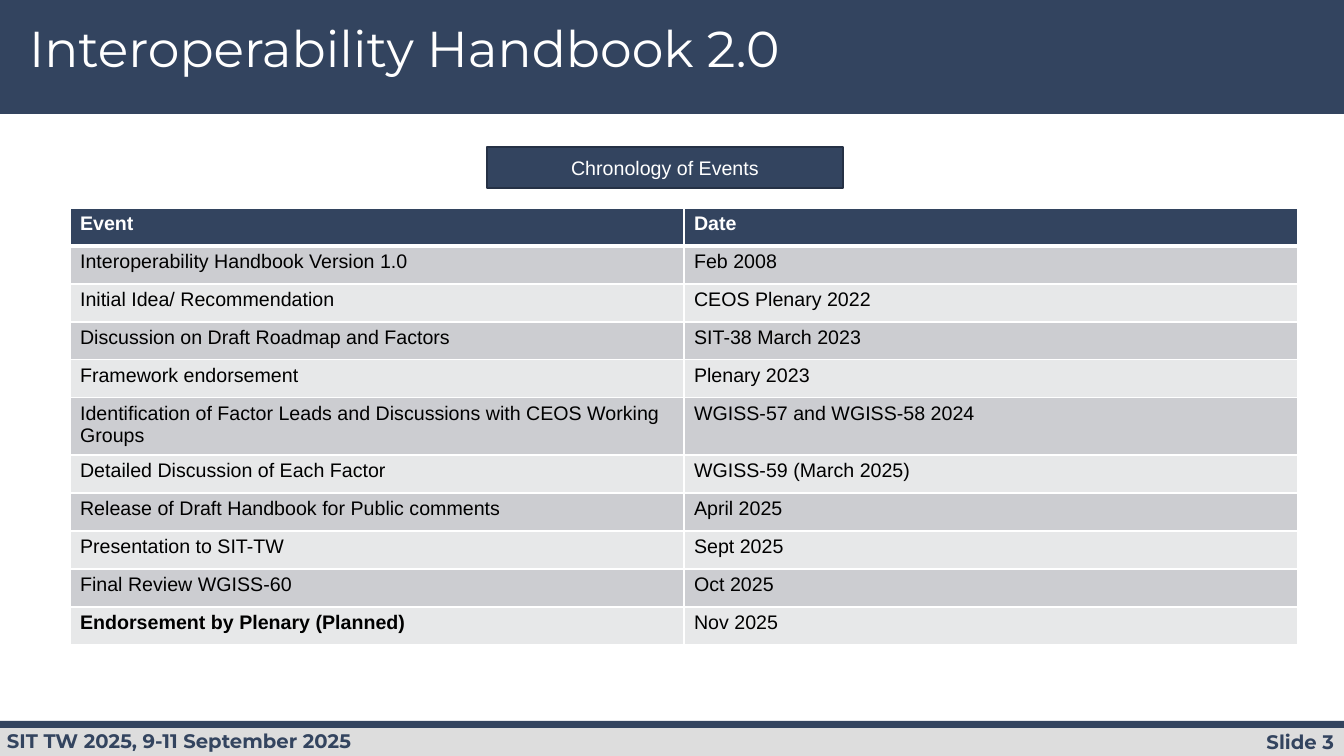
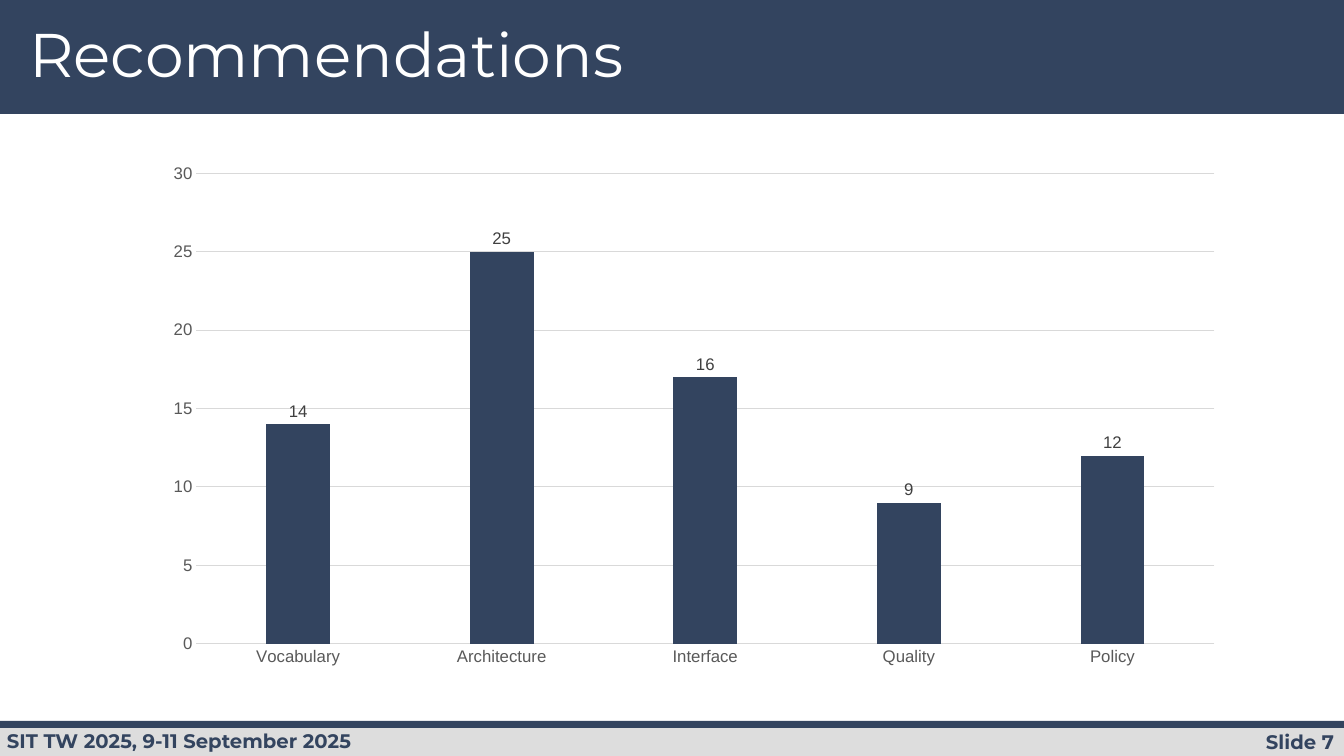
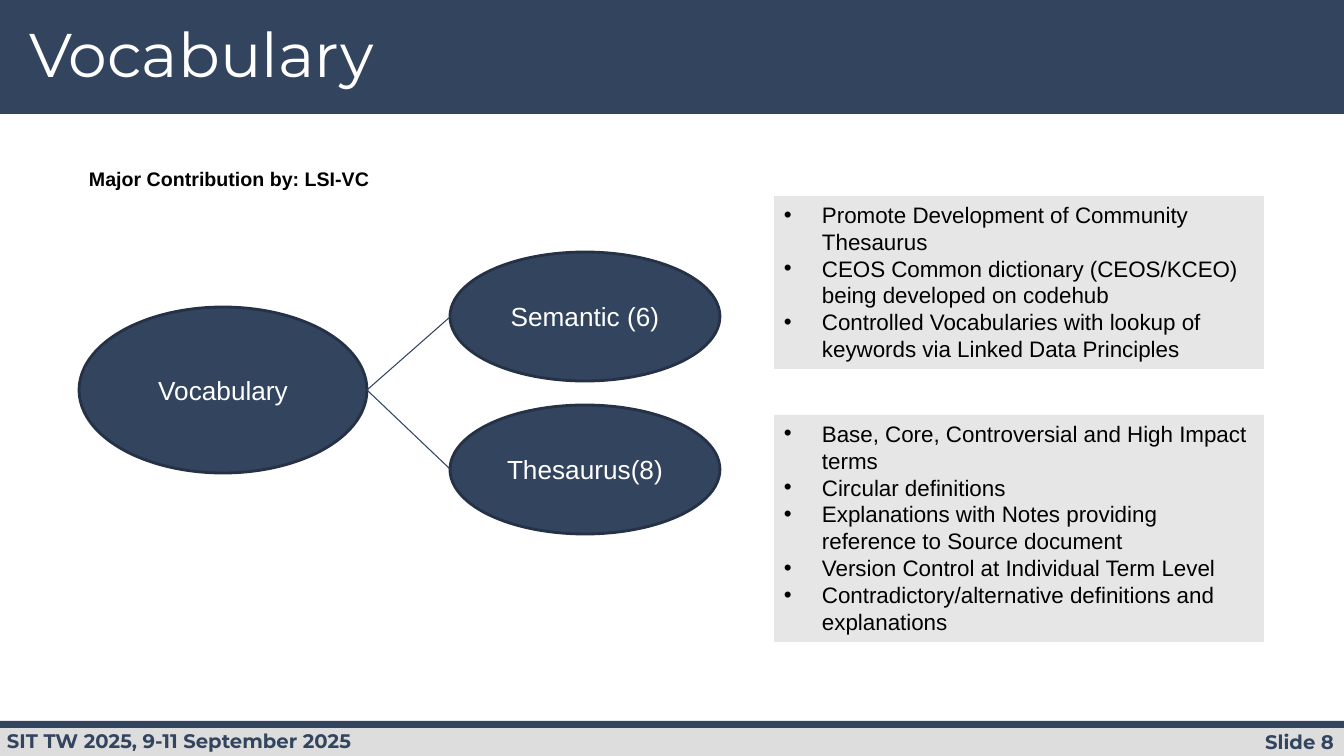
from lxml.etree import SubElement
from pptx import Presentation
from pptx.chart.data import CategoryChartData
from pptx.dml.color import RGBColor
from pptx.enum.chart import XL_CHART_TYPE, XL_LABEL_POSITION, XL_TICK_MARK
from pptx.enum.shapes import MSO_CONNECTOR, MSO_SHAPE
from pptx.enum.text import MSO_ANCHOR as ANCHOR, MSO_AUTO_SIZE, PP_ALIGN as ALIGN
from pptx.oxml.ns import qn
from pptx.util import Emu, Pt

color = RGBColor.from_string
NAVY, EDGE, WHITE, BLACK = "33445F", "253145", "FFFFFF", "000000"
BAND_GRAY, BOX_GRAY, GRID_GRAY, AXIS_GRAY = "DDDDDD", "E7E6E6", "D9D9D9", "595959"
BODY_FONT, BRAND_FONT = "Arial", "Montserrat"
PX_PER_INCH = 100.8


def px(*lengths):
    return [Emu(round(length * 914400 / PX_PER_INCH)) for length in lengths]


def add_box(slide, kind, at, fill=None, edge=None, lines=(), size=14, font=BODY_FONT,
            ink=BLACK, bold=False, align=ALIGN.LEFT, anchor=ANCHOR.TOP, bullets=False):
    """Add a preset shape, or a text box when kind is None."""
    if kind is None:
        shape = slide.shapes.add_textbox(*px(*at))
    else:
        shape = slide.shapes.add_shape(kind, *px(*at))
        shape.shadow.inherit = False
    if fill:
        shape.fill.solid()
        shape.fill.fore_color.rgb = color(fill)
    if edge:
        shape.line.color.rgb = color(edge)
        shape.line.width = Pt(2)
    else:
        shape.line.fill.background()
    text_frame = shape.text_frame
    text_frame.word_wrap = True
    text_frame.vertical_anchor = anchor
    text_frame.text = "\n".join(lines)
    for paragraph in text_frame.paragraphs:
        paragraph.alignment = align
        if bullets:
            properties = paragraph._p.get_or_add_pPr()
            indent = px(38)[0]
            properties.set("marL", str(indent))
            properties.set("indent", str(-indent))
            bullet_color = SubElement(properties, qn("a:buClr"))
            SubElement(bullet_color, qn("a:srgbClr"), val=ink)
            SubElement(properties, qn("a:buFont"), typeface=BODY_FONT)
            SubElement(properties, qn("a:buChar"), char="•")
        for run in paragraph.runs:
            run.font.size = Pt(size)
            run.font.name = font
            run.font.bold = bold
            run.font.color.rgb = color(ink)
    return shape


presentation = Presentation()
presentation.slide_width, presentation.slide_height = px(1344, 756)
layout = presentation.slide_layouts[5]

# Shared layout: only the title placeholder stays
for placeholder in list(layout.placeholders):
    if placeholder.placeholder_format.idx != 0:
        placeholder._element.getparent().remove(placeholder._element)

# Slides with title and slide number
slides = []
for title_text, title_size, number in [("Interoperability Handbook 2.0", 36, 3),
                                       ("Recommendations", 44, 7),
                                       ("Vocabulary", 44, 8)]:
    slide = presentation.slides.add_slide(layout)
    slides.append(slide)
    title = slide.shapes.title
    title.left, title.top, title.width, title.height = px(19, 19, 1035, 86)
    title.text_frame.text = title_text
    title.text_frame.auto_size = MSO_AUTO_SIZE.NONE
    title.text_frame.vertical_anchor = ANCHOR.TOP
    paragraph = title.text_frame.paragraphs[0]
    paragraph.alignment = ALIGN.LEFT
    paragraph.line_spacing = 0.9
    font = paragraph.runs[0].font
    font.size = Pt(title_size)
    font.name = BRAND_FONT
    font.color.rgb = color(WHITE)
    if number == 3:
        # Bands and footer are drawn once, then moved into the layout
        shared = [add_box(slide, MSO_SHAPE.RECTANGLE, at, fill)
                  for at, fill in [((0, 0, 1344, 114), NAVY),
                                   ((0, 725, 1344, 31), BAND_GRAY),
                                   ((0, 721, 1344, 7), NAVY)]]
        shared.append(add_box(slide, None, (-3, 724, 648, 34),
                              lines=["SIT TW 2025, 9-11 September 2025"],
                              font=BRAND_FONT, ink=NAVY, bold=True))
        for shape in shared:
            layout.shapes._spTree.append(shape._element)
    add_box(slide, None, (1132, 725, 212, 34), lines=[f"Slide {number}"],
            font=BRAND_FONT, ink=NAVY, bold=True, align=ALIGN.RIGHT)

chronology, recommendations, vocabulary = slides

# Chronology table
events = [
    ("Event", "Date"),
    ("Interoperability Handbook Version 1.0", "Feb 2008"),
    ("Initial Idea/ Recommendation", "CEOS Plenary 2022"),
    ("Discussion on Draft Roadmap and Factors", "SIT-38 March 2023"),
    ("Framework endorsement", "Plenary 2023"),
    ("Identification of Factor Leads and Discussions with CEOS Working Groups",
     "WGISS-57 and WGISS-58 2024"),
    ("Detailed Discussion of Each Factor", "WGISS-59 (March 2025)"),
    ("Release of Draft Handbook for Public comments", "April 2025"),
    ("Presentation to SIT-TW", "Sept 2025"),
    ("Final Review WGISS-60", "Oct 2025"),
    ("Endorsement by Plenary (Planned)", "Nov 2025"),
]
table = chronology.shapes.add_table(
    len(events), 2, *px(70, 208, 1228, 38 * len(events))).table
for row_index, event in enumerate(events):
    table.rows[row_index].height = px(38)[0]
    is_header = row_index == 0
    row_fill = NAVY if is_header else ("E7E8E9", "CCCDD1")[row_index % 2]
    for column_index, text in enumerate(event):
        cell = table.cell(row_index, column_index)
        cell.text = text
        font = cell.text_frame.paragraphs[0].runs[0].font
        font.size = Pt(14)
        font.name = BODY_FONT
        font.bold = is_header or text.startswith("Endorsement")
        font.color.rgb = color(WHITE if is_header else BLACK)
        for side in ("lnL", "lnR", "lnT", "lnB"):
            thick = (is_header and side == "lnB") or (row_index == 1 and side == "lnT")
            border = SubElement(cell._tc.get_or_add_tcPr(), qn(f"a:{side}"),
                                w=str(Pt(3 if thick else 1)))
            SubElement(SubElement(border, qn("a:solidFill")), qn("a:srgbClr"), val=WHITE)
        cell.fill.solid()
        cell.fill.fore_color.rgb = color(row_fill)
add_box(chronology, MSO_SHAPE.RECTANGLE, (487, 147, 356, 41), NAVY, EDGE,
        ["Chronology of Events"], ink=WHITE, align=ALIGN.CENTER, anchor=ANCHOR.MIDDLE)

# Recommendations chart
chart_data = CategoryChartData()
chart_data.categories = ["Vocabulary", "Architecture", "Interface", "Quality", "Policy"]
chart_data.add_series("Series 1", (14, 25, 17, 9, 12))
chart = recommendations.shapes.add_chart(
    XL_CHART_TYPE.COLUMN_CLUSTERED, *px(152, 154, 1084, 522), chart_data).chart
chart.has_title = False
chart.has_legend = False
chart.font.size = Pt(10)
chart.font.name = BODY_FONT
chart.font.color.rgb = color(BLACK)

category_axis, value_axis = chart.category_axis, chart.value_axis
for axis in (category_axis, value_axis):
    axis.major_tick_mark = axis.minor_tick_mark = XL_TICK_MARK.NONE
    axis.tick_labels.font.size = Pt(12)
    axis.tick_labels.font.name = BODY_FONT
    axis.tick_labels.font.color.rgb = color(AXIS_GRAY)
value_axis.minimum_scale, value_axis.maximum_scale, value_axis.major_unit = 0, 30, 5
value_axis.format.line.fill.background()
for line in (category_axis.format.line, value_axis.major_gridlines.format.line):
    line.color.rgb = color(GRID_GRAY)
    line.width = Pt(0.75)

plot = chart.plots[0]
plot.gap_width, plot.overlap = 219, -27
plot.vary_by_categories = False
series = plot.series[0]
series.format.fill.solid()
series.format.fill.fore_color.rgb = color(NAVY)
labels = series.data_labels
labels.show_value = True
labels.position = XL_LABEL_POSITION.OUTSIDE_END
interface_label = series.points[2].data_label
interface_label.text_frame.text = "16"
interface_label.position = XL_LABEL_POSITION.OUTSIDE_END
for font in (labels.font, interface_label.text_frame.paragraphs[0].runs[0].font):
    font.size = Pt(12)
    font.name = BODY_FONT
    font.color.rgb = color("404040")

# Vocabulary tree
add_box(vocabulary, None, (79, 162, 436, 34), lines=["Major Contribution by: LSI-VC"],
        bold=True)
for text, at in [("Vocabulary", (79, 307, 288, 166)),
                 ("Semantic (6)", (450, 252, 270, 129)),
                 ("Thesaurus(8)", (450, 405, 270, 129))]:
    add_box(vocabulary, MSO_SHAPE.OVAL, at, NAVY, EDGE, [text], size=18.7, ink=WHITE,
            align=ALIGN.CENTER, anchor=ANCHOR.MIDDLE)
for branch_y in (317, 469):
    connector = vocabulary.shapes.add_connector(
        MSO_CONNECTOR.STRAIGHT, *px(367, 390, 450, branch_y))
    connector.line.color.rgb = color("2F415D")
    connector.line.width = Pt(0.75)
    SubElement(connector._element.spPr, qn("a:effectLst"))

# Notes for each branch
semantic_notes = [
    "Promote Development of Community Thesaurus",
    "CEOS Common dictionary (CEOS/KCEO) being developed on codehub",
    "Controlled Vocabularies with lookup of keywords via Linked Data Principles",
]
thesaurus_notes = [
    "Base, Core, Controversial and High Impact terms",
    "Circular definitions",
    "Explanations with Notes providing reference to Source document",
    "Version Control at Individual Term Level",
    "Contradictory/alternative definitions and explanations",
]
for top, height, notes in [(196, 173, semantic_notes), (415, 227, thesaurus_notes)]:
    add_box(vocabulary, MSO_SHAPE.RECTANGLE, (774, top, 490, height), BOX_GRAY,
            lines=notes, size=16, bullets=True)

presentation.save("out.pptx")
